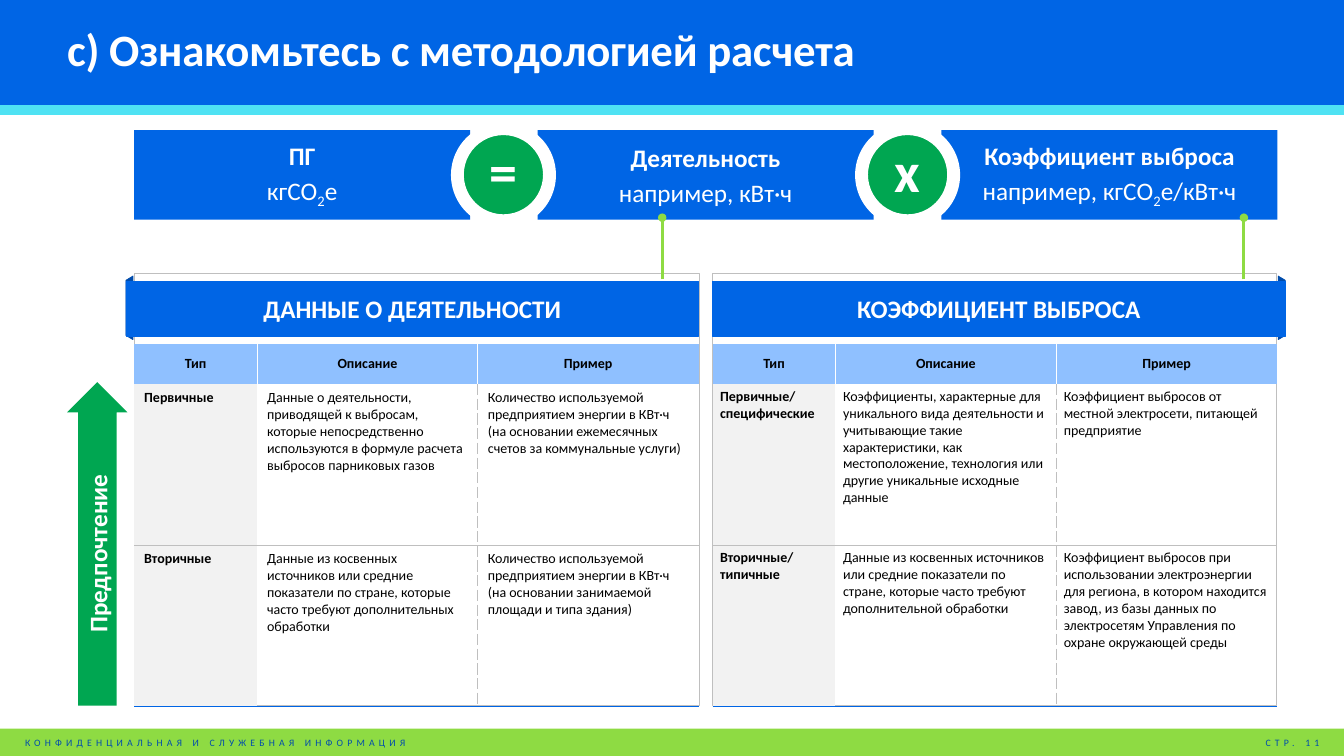
from lxml import etree
from pptx import Presentation
from pptx import util as u
from pptx.dml import color
from pptx.enum import shapes, text
from pptx.oxml import ns

Pt = u.Pt
KIND = shapes.MSO_SHAPE
MID = text.MSO_ANCHOR.MIDDLE
LEFT, CENTER, RIGHT = text.PP_ALIGN.LEFT, text.PP_ALIGN.CENTER, text.PP_ALIGN.RIGHT
HEX = dict(blue="0065E5", navy="004CAC", cyan="4FE2F3", lime="8EDB43", green="00A651",
           sky="8FC0FF", pale="F2F2F2", gray="BFBFBF", white="FFFFFF", black="000000")
PLAIN = "{2D5ABB26-0587-4C30-8999-92F81FD0307C}"  # table style without grid
TOP, ROWS, COLS = 245.5, (28.8, 115.2, 115.2), (87.8, 157.7, 157.7)
HEAD = ("Тип", "Описание", "Пример")
DATA = (
    ("Первичные",
     "Данные о деятельности, приводящей к выбросам, которые непосредственно "
     "используются в формуле расчета выбросов парниковых газов",
     "Количество используемой предприятием энергии в КВт·ч "
     "(на основании ежемесячных счетов за коммунальные услуги)"),
    ("Вторичные",
     "Данные из косвенных источников или средние показатели по стране, "
     "которые часто требуют дополнительных обработки",
     "Количество используемой предприятием энергии в КВт·ч "
     "(на основании занимаемой площади и типа здания)"))
RATES = (
    ("Первичные/\nспецифические",
     "Коэффициенты, характерные для уникального вида деятельности и учитывающие такие "
     "характеристики, как местоположение, технология или другие уникальные исходные данные",
     "Коэффициент выбросов от местной электросети, питающей \nпредприятие"),
    ("Вторичные/\nтипичные",
     "Данные из косвенных источников или средние показатели по стране, "
     "которые часто требуют дополнительной обработки",
     "Коэффициент выбросов при использовании электроэнергии для региона, в котором "
     "находится завод, из базы данных по электросетям Управления по охране окружающей среды"))


def rgb(name):
    return color.RGBColor.from_string(HEX[name])


def add_run(para, words, size, tint="white", bold=True, track=0, base=0):
    for i, part in enumerate(words.split("\n")):
        if i:
            para.add_line_break()
        run = para.add_run()
        run.text = part
        font = run.font
        font.name, font.size, font.bold = "Calibri", Pt(size), bold
        font.color.rgb = rgb(tint)
        props = run._r.get_or_add_rPr()
        if track:
            props.set("spc", str(track))
        if base:
            props.set("baseline", str(base))


def add_box(slide, kind, at, fill=None, line=None, width=0.5):
    box = slide.shapes.add_shape(kind, *map(Pt, at))
    box.shadow.inherit = False
    if fill:
        box.fill.solid()
        box.fill.fore_color.rgb = rgb(fill)
    else:
        box.fill.background()
    if line:
        box.line.color.rgb = rgb(line)
        box.line.width = Pt(width)
    else:
        box.line.fill.background()
    return box


def label(box, words, size):
    frame = box.text_frame
    frame.word_wrap = True
    frame.vertical_anchor = MID
    para = frame.paragraphs[0]
    para.alignment = CENTER
    add_run(para, words, size)
    return frame


def add_note(slide, at, words, size, tint, align=LEFT, bold=False, track=0):
    frame = slide.shapes.add_textbox(*map(Pt, at)).text_frame
    frame.word_wrap = True
    para = frame.paragraphs[0]
    para.alignment = align
    add_run(para, words, size, tint, bold, track)
    return frame


def add_term(slide, left, name, unit):
    """Formula block: name above its unit, digits in subscript."""
    box = add_box(slide, KIND.RECTANGLE, (left, 93, 240, 64), "blue")
    frame = label(box, name, 18)
    para = frame.add_paragraph()
    para.alignment = CENTER
    for words in unit:
        add_run(para, words, 18, bold=False, base=-25000 if words.isdigit() else 0)
    for para in frame.paragraphs:
        para.space_after = Pt(3)


def add_sign(slide, left, sign):
    add_box(slide, KIND.OVAL, (left, 88, 74, 74), "white", "white", 1)
    disc = add_box(slide, KIND.OVAL, (left + 8.2, 96, 57.6, 57.6), "green", "white", 1)
    frame = label(disc, sign, 40)
    frame.margin_top, frame.margin_bottom = Pt(0), Pt(7.2)


def add_edge(cell, side, tint, width=0.5, dash="solid"):
    edge = etree.SubElement(cell._tc.get_or_add_tcPr(), ns.qn("a:ln" + side), w=str(Pt(width)))
    fill = etree.SubElement(edge, ns.qn("a:solidFill"))
    etree.SubElement(fill, ns.qn("a:srgbClr"), val=HEX[tint])
    etree.SubElement(edge, ns.qn("a:prstDash"), val=dash)


def fill_cell(cell, row, col, words, pad):
    # Borders: white in the head, dashed between text columns
    if row == 0:
        tint, dash = "white", "solid"
    else:
        tint, dash = "gray", "dash"
    first = 0 if row == 0 else 1
    if col > first:
        add_edge(cell, "L", tint, dash=dash)
    if first <= col < 2:
        add_edge(cell, "R", tint, dash=dash)
    if row == 2:
        add_edge(cell, "T", "gray")
        add_edge(cell, "B", "blue", 1)
    elif row == 1:
        add_edge(cell, "B", "gray")
    # Fill and text
    shade = "sky" if row == 0 else "pale" if col == 0 else None
    if shade:
        cell.fill.solid()
        cell.fill.fore_color.rgb = rgb(shade)
    else:
        cell.fill.background()
    cell.margin_left = cell.margin_right = Pt(pad)
    cell.margin_top = cell.margin_bottom = Pt(pad / 2)
    para = cell.text_frame.paragraphs[0]
    if row == 0:
        cell.vertical_anchor = MID
        para.alignment = CENTER
    add_run(para, words, 10, "black", row == 0 or col == 0)


def add_grid(slide, left, body, pad):
    size = map(Pt, (left, TOP, sum(COLS), sum(ROWS)))
    table = slide.shapes.add_table(len(ROWS), len(COLS), *size).table
    table.horz_banding = False
    table._tbl.tblPr[0].text = PLAIN
    for col, width in zip(table.columns, COLS):
        col.width = Pt(width)
    for row, height in zip(table.rows, ROWS):
        row.height = Pt(height)
    for r, line in enumerate((HEAD, *body)):
        for c, words in enumerate(line):
            fill_cell(table.cell(r, c), r, c, words, pad)


def add_stem(slide, x):
    stem = slide.shapes.add_connector(shapes.MSO_CONNECTOR.STRAIGHT, *map(Pt, (x, 199.5, x, 155.5)))
    stem.line.color.rgb = rgb("lime")
    stem.line.width = Pt(2)
    etree.SubElement(stem.line._get_or_add_ln(), ns.qn("a:tailEnd"), type="oval")
    etree.SubElement(stem._element.spPr, ns.qn("a:effectLst"))


def add_fold(slide, left, turn):
    fold = add_box(slide, KIND.TRAPEZOID, (left, 217.4, 45.4, 5), "navy", "navy")
    fold.adjustments[0] = 0.6
    fold.rotation = turn


def main():
    deck = Presentation()
    deck.slide_width, deck.slide_height = Pt(960), Pt(540)
    slide = deck.slides.add_slide(deck.slide_layouts[6])

    # Header and footer
    for top, height, tint in ((0, 75, "blue"), (520.5, 19.5, "lime"), (75, 7, "cyan")):
        add_box(slide, KIND.RECTANGLE, (0, top, 960, height), tint)
    add_note(slide, (10.8, 522.7, 451, 16), "КОНФИДЕНЦИАЛЬНАЯ И СЛУЖЕБНАЯ ИНФОРМАЦИЯ", 7, "navy", track=300)
    add_note(slide, (871, 522.7, 78.5, 16), "СТР. 11", 7, "navy", RIGHT, track=300)
    title = add_note(slide, (48, 13, 862.6, 49), "c) Ознакомьтесь с методологией расчета",
                     32, "white", bold=True, track=-20)
    title.margin_left = title.margin_right = title.margin_top = title.margin_bottom = 0
    title.vertical_anchor = MID
    title.paragraphs[0].line_spacing = 0.85

    # Panels, ribbon folds and preference arrow
    add_fold(slide, 892.8, 90)
    for left in (95.8, 508.5):
        add_box(slide, KIND.RECTANGLE, (left, 195.1, 403.5, 308.9), line="gray")
    add_fold(slide, 69.8, 270)
    arrow = add_box(slide, KIND.UP_ARROW, (48, 273, 43, 231), "green")
    arrow.adjustments[0] = 0.64
    label(arrow, "Предпочтение", 18)
    arrow.text_frame._txBody.bodyPr.set("vert", "vert270")

    # Formula
    add_term(slide, 384, "Деятельность", ("например, кВт·ч",))
    add_term(slide, 672.5, "Коэффициент выброса", ("например, кгСО", "2", "е/кВт·ч"))
    add_term(slide, 95.8, "ПГ", ("кгСО", "2", "е"))
    add_sign(slide, 322.6, "=")
    add_sign(slide, 611.3, "x")

    # Tables
    add_grid(slide, 95.8, DATA, 7.2)
    add_grid(slide, 509, RATES, 5.4)

    # Links and ribbons
    for x in (473, 888.5):
        add_stem(slide, x)
    for left, words in ((90, "ДАННЫЕ О ДЕЯТЕЛЬНОСТИ"), (509, "КОЭФФИЦИЕНТ ВЫБРОСА")):
        label(add_box(slide, KIND.RECTANGLE, (left, 201, 409, 39), "blue", "blue"), words, 18)

    deck.save("out.pptx")


if __name__ == "__main__":
    main()
